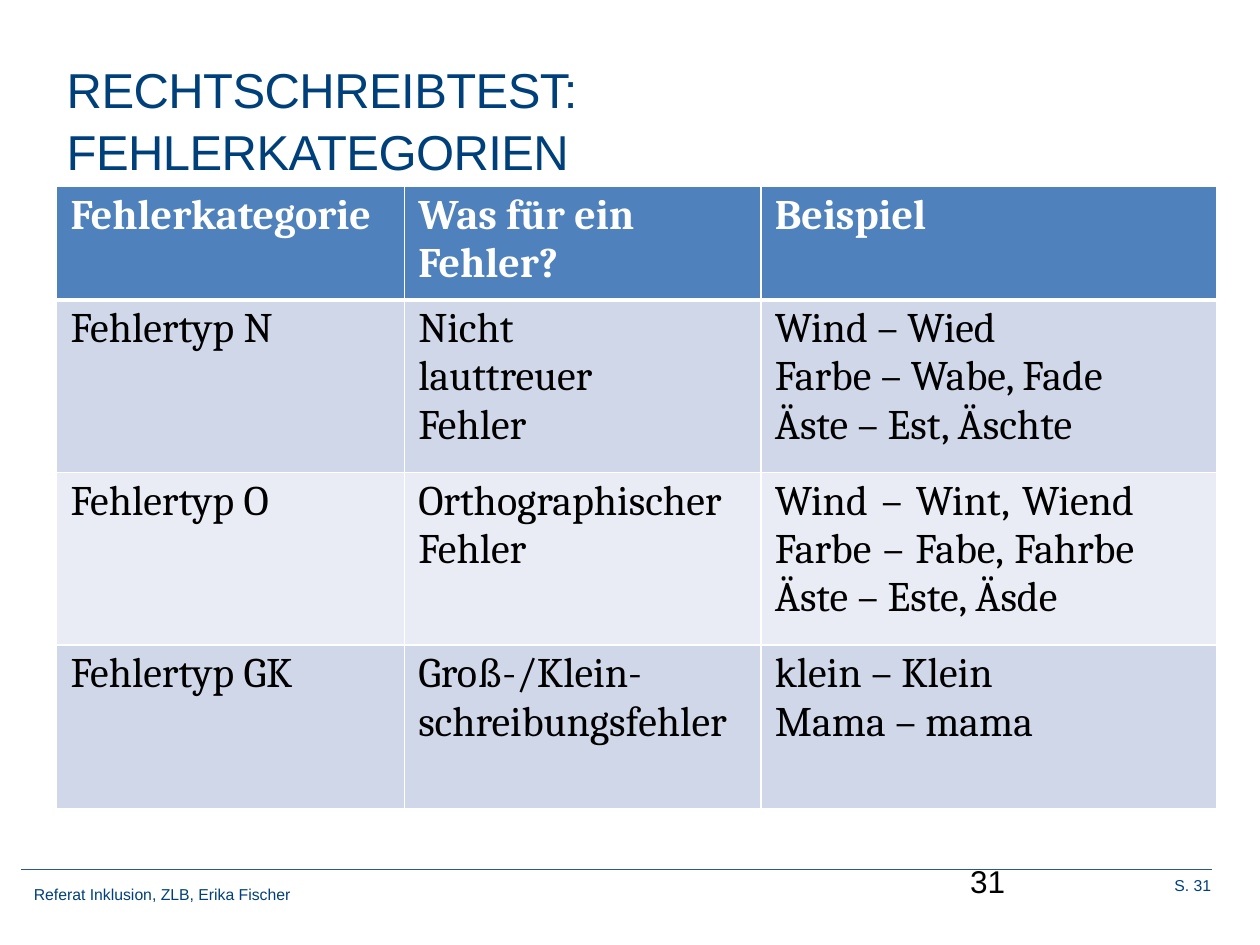
from pptx import Presentation
from pptx.dml.color import RGBColor
from pptx.enum.shapes import MSO_CONNECTOR as Conn
from pptx.enum.text import MSO_ANCHOR as Anchor, PP_ALIGN as Align
from pptx.oxml.ns import qn
from pptx.util import Inches, Pt
from lxml.etree import SubElement

NAVY, BLACK, WHITE = "00407A", "000000", "FFFFFF"
HEAD, DARK, LIGHT = "4F81BC", "D0D7E8", "E9ECF4"
COLS = [2.76, 2.83, 3.62]
ROWS = [0.9, 1.37, 1.37, 1.3]
CELLS = [
    ["Fehlerkategorie", "Was für ein\nFehler?", "Beispiel"],
    ["Fehlertyp N", "Nicht\vlauttreuer\vFehler",
     "Wind – Wied\nFarbe – Wabe, Fade\vÄste – Est, Äschte"],
    ["Fehlertyp O", "Orthographischer\nFehler",
     "Wind – Wint, Wiend Farbe – Fabe, Fahrbe Äste – Este, Äsde"],
    ["Fehlertyp GK", "Groß-/Klein-\vschreibungsfehler",
     "klein – Klein\vMama – mama"],
]


def rgb(code):
    """Turn a hex string into a colour."""
    return RGBColor.from_string(code)


def style(frame, name, size, color, bold=False):
    """Format every run of a text frame."""
    for par in frame.paragraphs:
        for run in par.runs:
            font = run.font
            font.name, font.size, font.bold = name, Pt(size), bold
            font.color.rgb = rgb(color)


def inset(item, left, top, right, low):
    """Set the inner margins of a text frame or cell."""
    item.margin_left, item.margin_top = Inches(left), Inches(top)
    item.margin_right, item.margin_bottom = Inches(right), Inches(low)


def label(slide, box, text, size, color, pad):
    """Add a wrapped text box and return its frame."""
    frame = slide.shapes.add_textbox(*map(Inches, box)).text_frame
    frame.word_wrap = True
    inset(frame, *pad)
    frame.text = text
    style(frame, "Arial", size, color)
    return frame


def title(slide, box):
    """Place the heading."""
    text = "RECHTSCHREIBTEST: FEHLERKATEGORIEN"
    frame = label(slide, box, text, 28, NAVY, (0.02, 0.01, 0, 0))
    par = frame.paragraphs[0]
    par.line_spacing = 1.05
    par.runs[0]._r.get_or_add_rPr().set("spc", "-30")


def border(cell, widths):
    """Draw white cell borders with a width in points for each side."""
    props = cell._tc.get_or_add_tcPr()
    for side, width in widths.items():
        line = SubElement(props, qn(f"a:ln{side}"), w=str(Pt(width)))
        fill = SubElement(line, qn("a:solidFill"))
        SubElement(fill, qn("a:srgbClr"), val=WHITE)


def grid(slide, box):
    """Place the table of error types."""
    size = len(ROWS), len(COLS)
    table = slide.shapes.add_table(*size, *map(Inches, box)).table
    for col, width in zip(table.columns, COLS):
        col.width = Inches(width)
    for row, high in zip(table.rows, ROWS):
        row.height = Inches(high)
    for i, texts in enumerate(CELLS):
        for j, text in enumerate(texts):
            cell = table.cell(i, j)
            border(cell, {"L": 1, "R": 1, "T": 3 if i == 1 else 1,
                          "B": 3 if i == 0 else 1})
            cell.fill.solid()
            shade = HEAD if i == 0 else DARK if i % 2 else LIGHT
            cell.fill.fore_color.rgb = rgb(shade)
            inset(cell, 0.11, 0.04, 0, 0)
            cell.text_frame.text = text
            ink = WHITE if i == 0 else BLACK
            style(cell.text_frame, "Cambria", 24, ink, i == 0)
    block = table.cell(2, 2)
    block.margin_right = Inches(0.66)
    block.text_frame.paragraphs[0].alignment = Align.JUSTIFY


def footer(slide, box):
    """Place the rule, the source note and the page numbers."""
    left, top, width, high = box
    ends = map(Inches, (left, top, left + width, top))
    rule = slide.shapes.add_connector(Conn.STRAIGHT, *ends)
    rule.line.color.rgb = rgb("2C5884")
    rule.line.width = Pt(0.75)
    SubElement(rule._element.spPr, qn("a:effectLst"))
    pad = 0.1, 0.05, 0.1, 0.05
    note = label(slide, (left, top + 0.07, 7.35, 0.25),
                 "Referat Inklusion, ZLB, Erika Fischer", 9, NAVY, pad)
    note.vertical_anchor = Anchor.MIDDLE
    page = label(slide, (left + 8.37, top, 1.17, high),
                 "S. 31", 9, NAVY, pad)
    page.paragraphs[0].alignment = Align.RIGHT
    label(slide, (left + 7.5, top - 0.07, 2.33, 0.52),
          "31", 18, BLACK, (0.03, 0.01, 0, 0))


def main():
    """Build and save the slide."""
    deck = Presentation()
    deck.slide_width, deck.slide_height = Inches(10), Inches(7.5)
    slide = deck.slides.add_slide(deck.slide_layouts[6])
    footer(slide, (0.17, 6.9, 9.45, 0.33))
    title(slide, (0.51, 0.44, 7.43, 0.56))
    grid(slide, (0.45, 1.48, sum(COLS), sum(ROWS)))
    deck.save("out.pptx")


if __name__ == "__main__":
    main()
